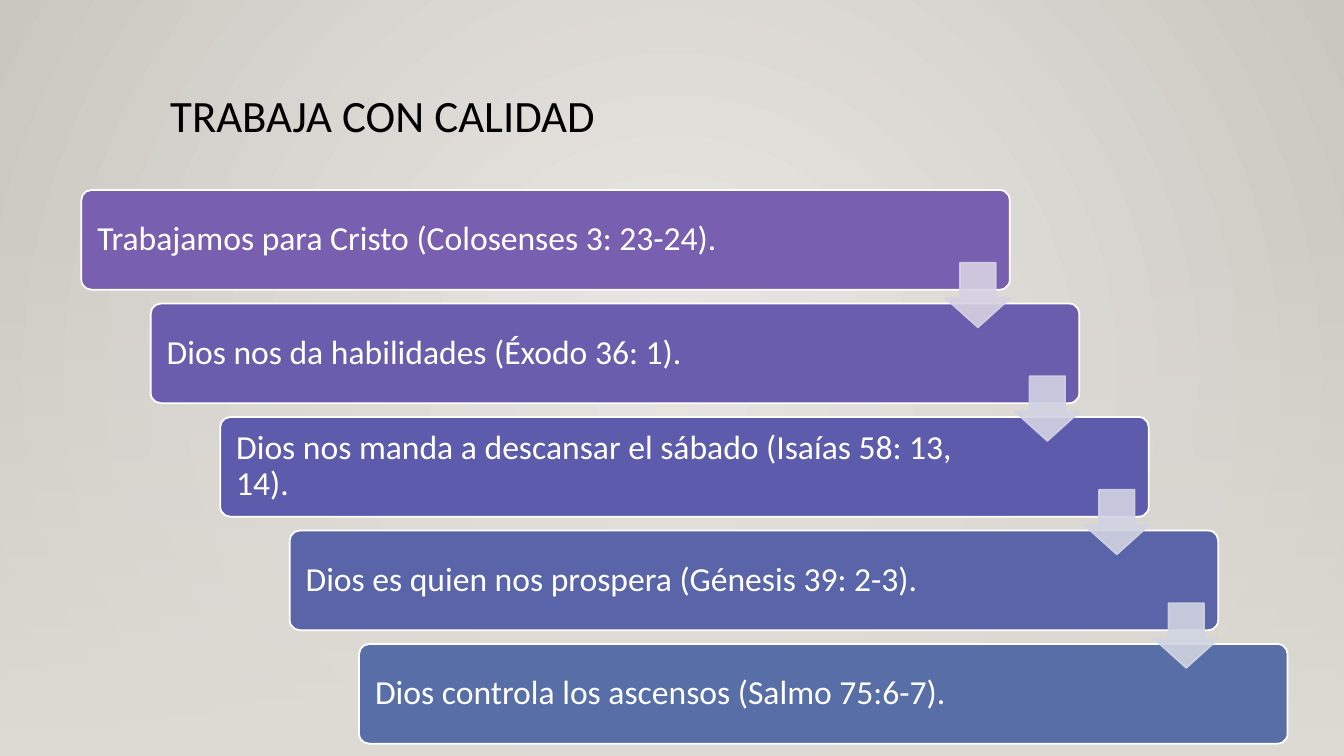
from lxml import etree
from pptx import Presentation
from pptx.dml.color import RGBColor
from pptx.enum.shapes import MSO_SHAPE
from pptx.enum.text import MSO_ANCHOR, PP_ALIGN
from pptx.oxml.ns import qn
from pptx.util import Cm, Pt

RECTANGLE = MSO_SHAPE.RECTANGLE
ROUNDED = MSO_SHAPE.ROUNDED_RECTANGLE
DOWN_ARROW = MSO_SHAPE.DOWN_ARROW
TOP, MIDDLE = MSO_ANCHOR.TOP, MSO_ANCHOR.MIDDLE
LEFT = PP_ALIGN.LEFT


def rgb(code):
    return RGBColor.from_string(code)


def write(shape, text, size, color, anchor):
    frame = shape.text_frame
    frame.word_wrap = True
    frame.vertical_anchor = anchor
    frame.text = text
    paragraph = frame.paragraphs[0]
    paragraph.alignment = LEFT
    paragraph.line_spacing = 0.9
    font = paragraph.runs[0].font
    font.name = "Calibri"
    font.size = Pt(size)
    font.color.rgb = rgb(color)


prs = Presentation()
prs.slide_width, prs.slide_height = Cm(33.87), Cm(19.05)
slide = prs.slides.add_slide(prs.slide_layouts[6])

# Background: light centre, darker corners
backdrop = slide.background.fill
backdrop.gradient()
for stop, color in zip(backdrop.gradient_stops, ("ECEAE7", "CAC7C1")):
    stop.color.rgb = rgb(color)
gradient = slide.element.find(".//" + qn("a:gradFill"))
gradient.remove(gradient.find(qn("a:lin")))
circle = etree.SubElement(gradient, qn("a:path"), path="circle")
etree.SubElement(circle, qn("a:fillToRect"), l="50000", t="50000", r="50000", b="50000")

# Floor that fades in towards the bottom
floor = slide.shapes.add_shape(RECTANGLE, 0, Cm(5.61), prs.slide_width, Cm(13.44))
floor.shadow.inherit = False
floor.line.fill.background()
floor.fill.gradient()
floor.fill.gradient_angle = 270
for stop in floor.fill.gradient_stops:
    stop.color.rgb = rgb("DFDBD5")
first_color = floor.element.spPr.find(".//" + qn("a:srgbClr"))
etree.SubElement(first_color, qn("a:alpha"), val="0")

# Title
title = slide.shapes.add_textbox(Cm(4.04), Cm(2.24), Cm(26.67), Cm(2.92))
write(title, "TRABAJA CON CALIDAD", 32, "000000", TOP)

# Staircase of principles
principles = [
    ("Trabajamos para Cristo (Colosenses 3: 23-24).", "795FAF"),
    ("Dios nos da habilidades (Éxodo 36: 1).", "6B5DAD"),
    ("Dios nos manda a descansar el sábado (Isaías 58: 13, 14).", "5D5BAB"),
    ("Dios es quien nos prospera (Génesis 39: 2-3).", "5964A9"),
    ("Dios controla los ascensos (Salmo 75:6-7).", "586EA6"),
]
STEP_X, STEP_Y = 1.75, 2.86
for i, (text, color) in enumerate(principles):
    step = slide.shapes.add_shape(
        ROUNDED, Cm(2.05 + i * STEP_X), Cm(4.79 + i * STEP_Y), Cm(23.4), Cm(2.51))
    step.adjustments[0] = 0.1
    step.shadow.inherit = False
    step.fill.solid()
    step.fill.fore_color.rgb = rgb(color)
    step.line.color.rgb = rgb("FFFFFF")
    step.line.width = Pt(1.25)
    write(step, text, 24, "FFFFFF", MIDDLE)
    step.text_frame.margin_left = Cm(0.33)
    step.text_frame.margin_right = Cm(3.68)

# Translucent arrows from each step to the next
for i, color in enumerate(("D7D2E3", "D3D2E3", "D2D3E2", "D1D5E1")):
    arrow = slide.shapes.add_shape(
        DOWN_ARROW, Cm(23.83 + i * STEP_X), Cm(6.62 + i * STEP_Y), Cm(1.63), Cm(1.63))
    arrow.adjustments[0] = 0.55
    arrow.adjustments[1] = 0.45
    arrow.shadow.inherit = False
    arrow.fill.solid()
    arrow.fill.fore_color.rgb = rgb(color)
    arrow.line.color.rgb = rgb(color)
    arrow.line.width = Pt(1.25)
    for tint in arrow.element.spPr.findall(".//" + qn("a:srgbClr")):
        etree.SubElement(tint, qn("a:alpha"), val="90000")

prs.save("out.pptx")
